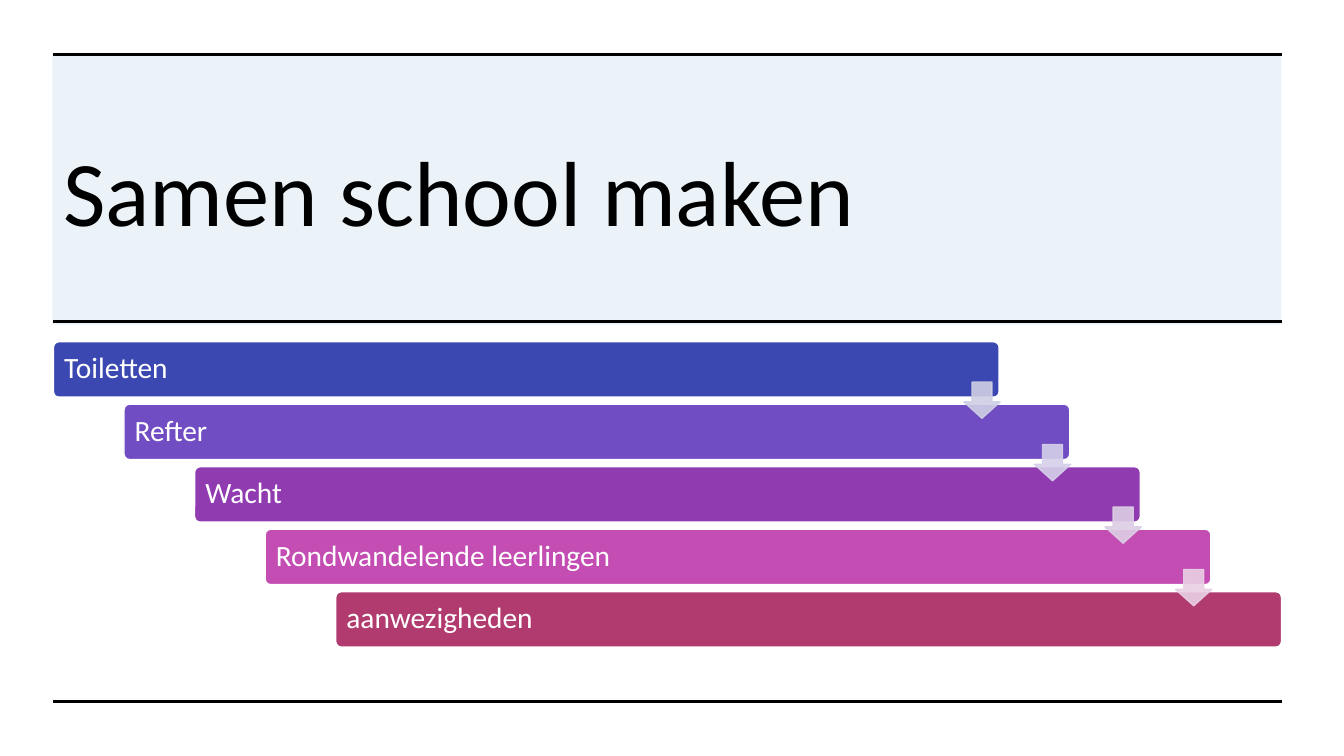
from lxml import etree
from pptx import Presentation
from pptx.dml.color import RGBColor
from pptx.enum import shapes, text
from pptx.oxml import ns
from pptx.util import Inches, Pt

BLACK = RGBColor(0x00, 0x00, 0x00)
WHITE = RGBColor(0xFF, 0xFF, 0xFF)
BAND_BLUE = RGBColor(0x4D, 0x8B, 0xC3)
INDIGO = RGBColor(0x3B, 0x48, 0xB1)
VIOLET = RGBColor(0x71, 0x4D, 0xC3)
PURPLE = RGBColor(0x91, 0x3B, 0xB1)
PINK = RGBColor(0xC3, 0x4D, 0xB2)
RASPBERRY = RGBColor(0xB1, 0x3B, 0x6F)
ARROW_TINTS = [
    RGBColor(0xCE, 0xCF, 0xE4),
    RGBColor(0xD5, 0xD0, 0xE9),
    RGBColor(0xDC, 0xCE, 0xE4),
    RGBColor(0xE9, 0xD0, 0xE4),
]
STEPS = [
    ("Toiletten", INDIGO),
    ("Refter", VIOLET),
    ("Wacht", PURPLE),
    ("Rondwandelende leerlingen", PINK),
    ("aanwezigheden", RASPBERRY),
]
FONT = "Calibri"
LEFT = 0.53
STEP_X, STEP_Y = 0.7, 0.62


def set_opacity(shape, percent):
    for color in shape._element.spPr.iter(ns.qn("a:srgbClr")):
        alpha = etree.SubElement(color, ns.qn("a:alpha"))
        alpha.set("val", str(percent * 1000))


def add_filled(slide, kind, left, top, width, height, color, outline=None):
    shape = slide.shapes.add_shape(
        kind, Inches(left), Inches(top), Inches(width), Inches(height)
    )
    shape.shadow.inherit = False
    shape.fill.solid()
    shape.fill.fore_color.rgb = color
    if outline is None:
        shape.line.fill.background()
    else:
        shape.line.color.rgb = outline
        shape.line.width = Pt(1)
    return shape


def write(frame, wording, size, color):
    frame.word_wrap = True
    frame.vertical_anchor = text.MSO_ANCHOR.MIDDLE
    frame.text = wording
    paragraph = frame.paragraphs[0]
    paragraph.alignment = text.PP_ALIGN.LEFT
    font = paragraph.runs[0].font
    font.name = FONT
    font.size = Pt(size)
    font.color.rgb = color
    return paragraph


def add_title(slide, wording):
    title = slide.shapes.add_textbox(
        Inches(LEFT), Inches(1.07), Inches(11.33), Inches(1.63)
    )
    write(title.text_frame, wording, 66, BLACK)


def add_rule(slide, y):
    rule = slide.shapes.add_connector(
        shapes.MSO_CONNECTOR.STRAIGHT, Inches(LEFT), Inches(y), Inches(12.72), Inches(y)
    )
    rule.line.color.rgb = BLACK
    rule.line.width = Pt(2.25)
    etree.SubElement(rule._element.spPr, ns.qn("a:effectLst"))


def add_step(slide, index, wording, color):
    bar = add_filled(
        slide, shapes.MSO_SHAPE.ROUNDED_RECTANGLE,
        LEFT + index * STEP_X, 3.39 + index * STEP_Y, 9.38, 0.55, color, WHITE,
    )
    bar.adjustments[0] = 0.1
    frame = bar.text_frame
    frame.margin_left = frame.margin_right = Inches(0.09)
    frame.margin_top = frame.margin_bottom = Inches(0.09)
    write(frame, wording, 21, WHITE).line_spacing = 0.9


def add_step_arrow(slide, index, color):
    arrow = add_filled(
        slide, shapes.MSO_SHAPE.DOWN_ARROW,
        9.56 + index * STEP_X, 3.79 + index * STEP_Y, 0.36, 0.36, color, color,
    )
    arrow.adjustments[0] = 0.55
    arrow.adjustments[1] = 0.45
    set_opacity(arrow, 90)


def main():
    deck = Presentation()
    deck.slide_width = Inches(13.33)
    deck.slide_height = Inches(7.5)
    slide = deck.slides.add_slide(deck.slide_layouts[6])

    band = add_filled(
        slide, shapes.MSO_SHAPE.RECTANGLE, 0.52, 0.53, 12.19, 2.69, BAND_BLUE
    )
    set_opacity(band, 10)
    add_title(slide, "Samen school maken")
    for y in (0.54, 3.19, 6.96):
        add_rule(slide, y)
    for index, (wording, color) in enumerate(STEPS):
        add_step(slide, index, wording, color)
    for index, tint in enumerate(ARROW_TINTS):
        add_step_arrow(slide, index, tint)

    deck.save("out.pptx")


if __name__ == "__main__":
    main()
